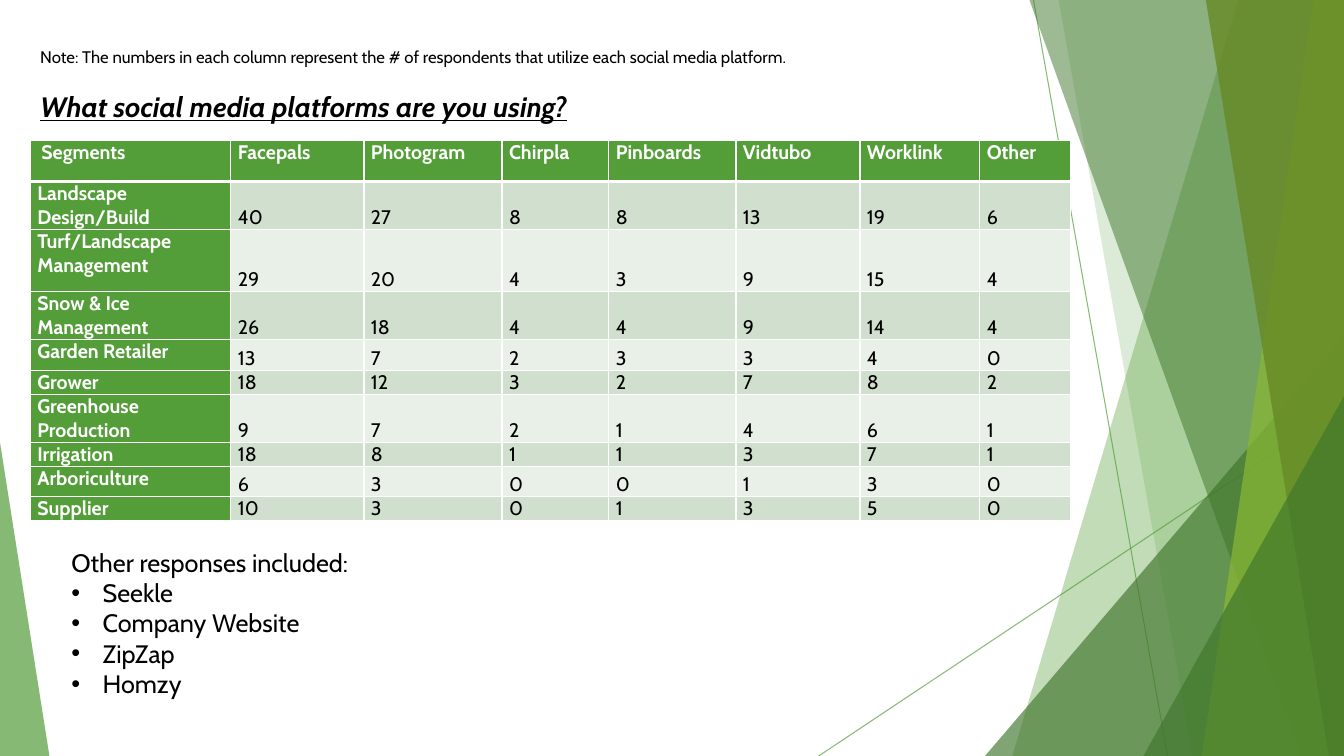
from lxml import etree
from pptx import Presentation
from pptx.dml.color import RGBColor
from pptx.enum.shapes import MSO_CONNECTOR, MSO_SHAPE
from pptx.enum.text import MSO_ANCHOR, MSO_AUTO_SIZE, PP_ALIGN
from pptx.oxml.ns import qn
from pptx.util import Inches, Pt

STRAIGHT = MSO_CONNECTOR.STRAIGHT
TRIANGLE = MSO_SHAPE.ISOSCELES_TRIANGLE
TOP, BOTTOM = MSO_ANCHOR.TOP, MSO_ANCHOR.BOTTOM
LEFT = PP_ALIGN.LEFT
NO_AUTOFIT = MSO_AUTO_SIZE.NONE

FONT = "Cabin"
BLACK, WHITE = "000000", "FFFFFF"
GREEN, DARK_GREEN, LIME, OLIVE = "549E39", "3F762B", "8AB833", "678A26"
BANDS = ("D1DFCE", "E9F0E8")

# Panels give the x of their slanted edge at top and bottom;
# wedges give their width and height from the bottom right corner.
FACETS = [
    ("panel", 4.16, 1.92, GREEN, 36),
    ("panel", 2.38, 3.71, GREEN, 20),
    ("wedge", 3.56, 4.17, DARK_GREEN, 66),
    ("panel", 2.09, 4.79, DARK_GREEN, 50),
    ("panel", 4.91, 3.8, LIME, 70),
    ("panel", 3.84, 5.06, OLIVE, 80),
    ("wedge", 1.99, 3.57, DARK_GREEN, 66),
]
FACET_LINES = [(2.13, 0, 3.46, 7.5), (5.21, 4.03, 0, 7.5)]

PLATFORMS = ["Facepals", "Photogram", "Chirpla", "Pinboards",
             "Vidtubo", "Worklink", "Other"]
COLUMN_WIDTHS = [1.99, 1.32, 1.37, 1.06, 1.26, 1.23, 1.19, 0.9]
HEADER_HEIGHT = 0.41
SEGMENTS = [
    ("Landscape Design/Build", 0.47, [40, 27, 8, 8, 13, 19, 6]),
    ("Turf/Landscape Management", 0.62, [29, 20, 4, 3, 9, 15, 4]),
    ("Snow & Ice Management", 0.47, [26, 18, 4, 4, 9, 14, 4]),
    ("Garden Retailer", 0.31, [13, 7, 2, 3, 3, 4, 0]),
    ("Grower", 0.23, [18, 12, 3, 2, 7, 8, 2]),
    ("Greenhouse Production", 0.47, [9, 7, 2, 1, 4, 6, 1]),
    ("Irrigation", 0.23, [18, 8, 1, 1, 3, 7, 1]),
    ("Arboriculture", 0.3, [6, 3, 0, 0, 1, 3, 0]),
    ("Supplier", 0.23, [10, 3, 0, 1, 3, 5, 0]),
]
OTHER_RESPONSES = ["Seekle", "Company Website", "ZipZap", "Homzy"]


def rgb(color):
    return RGBColor.from_string(color)


def set_alpha(element, percent):
    for color in element.iter(qn("a:srgbClr")):
        etree.SubElement(color, qn("a:alpha"), val=str(percent * 1000))


def style_font(paragraph, size, color=BLACK, bold=False):
    font = paragraph.font
    font.name, font.size, font.bold = FONT, Pt(size), bold
    font.color.rgb = rgb(color)


def fill_facet(facet, color, percent):
    facet.shadow.inherit = False
    facet.fill.solid()
    facet.fill.fore_color.rgb = rgb(color)
    facet.line.fill.background()
    set_alpha(facet.fill._xPr, percent)


def add_wedge(slide, left, top, width, height, apex, color, percent):
    wedge = slide.shapes.add_shape(
        TRIANGLE, Inches(left), Inches(top), Inches(width), Inches(height))
    wedge.adjustments[0] = apex
    fill_facet(wedge, color, percent)


def add_facet_band(slide, left, top, width, height):
    """Overlapping translucent facets along the right edge."""
    right, bottom = left + width, top + height
    for x1, y1, x2, y2 in FACET_LINES:
        line = slide.shapes.add_connector(
            STRAIGHT, Inches(left + x1), Inches(top + y1),
            Inches(left + x2), Inches(top + y2))
        line.line.color.rgb = rgb(GREEN)
        line.line.width = Pt(0.75)
        properties = line._element.spPr
        set_alpha(properties, 70)
        etree.SubElement(properties, qn("a:effectLst"))
    for kind, a, b, color, percent in FACETS:
        if kind == "wedge":
            add_wedge(slide, right - a, bottom - b, a, b, 1, color, percent)
            continue
        corners = [(left + a, top), (right, top), (right, bottom), (left + b, bottom)]
        points = [(Inches(x), Inches(y)) for x, y in corners]
        builder = slide.shapes.build_freeform(*points[0])
        builder.add_line_segments(points[1:], close=True)
        fill_facet(builder.convert_to_shape(), color, percent)


def add_borders(cell, bottom_width):
    properties = cell._tc.get_or_add_tcPr()
    widths = {"a:lnL": 1, "a:lnR": 1, "a:lnT": 1, "a:lnB": bottom_width}
    for position, (side, width) in enumerate(widths.items()):
        border = etree.Element(qn(side), w=str(Pt(width)))
        fill = etree.SubElement(border, qn("a:solidFill"))
        etree.SubElement(fill, qn("a:srgbClr"), val=WHITE)
        properties.insert(position, border)


def add_platform_table(slide, left, top, width, height):
    rows = [["Segments", *PLATFORMS]]
    rows += [[segment, *counts] for segment, _, counts in SEGMENTS]
    heights = [HEADER_HEIGHT] + [row_height for _, row_height, _ in SEGMENTS]
    table = slide.shapes.add_table(
        len(rows), len(COLUMN_WIDTHS), Inches(left), Inches(top),
        Inches(width), Inches(height)).table
    for column, column_width in zip(table.columns, COLUMN_WIDTHS):
        column.width = Inches(column_width)
    for r, values in enumerate(rows):
        table.rows[r].height = Inches(heights[r])
        for c, value in enumerate(values):
            cell = table.cell(r, c)
            heading = r == 0 or c == 0
            cell.text = str(value)
            cell.margin_left = Inches(0.11 if r == c == 0 else 0.07)
            cell.margin_right = Inches(0.07)
            cell.margin_top = cell.margin_bottom = 0
            cell.vertical_anchor = TOP if heading else BOTTOM
            cell.fill.solid()
            cell.fill.fore_color.rgb = rgb(GREEN if heading else BANDS[(r - 1) % 2])
            add_borders(cell, 3 if r == 0 else 1)
            style_font(cell.text_frame.paragraphs[0], 14,
                       WHITE if heading else BLACK, heading)


def add_other_responses(slide, left, top, width, height):
    box = slide.shapes.add_textbox(
        Inches(left), Inches(top), Inches(width), Inches(height))
    frame = box.text_frame
    frame.word_wrap = True
    frame.text = "\n".join(["Other responses included:", *OTHER_RESPONSES])
    for number, paragraph in enumerate(frame.paragraphs):
        if number:
            properties = paragraph._p.get_or_add_pPr()
            properties.set("marL", str(Inches(0.31)))
            properties.set("indent", str(Inches(-0.31)))
            etree.SubElement(properties, qn("a:buFont"), typeface="Arial")
            etree.SubElement(properties, qn("a:buChar"), char="•")
        style_font(paragraph, 18)


def add_question(slide, left, top, width, height):
    title = slide.shapes.title
    title.left, title.top = Inches(left), Inches(top)
    title.width, title.height = Inches(width), Inches(height)
    frame = title.text_frame
    frame.text = "What social media platforms are you using?"
    frame.word_wrap = False
    frame.auto_size = NO_AUTOFIT
    frame.vertical_anchor = TOP
    question = frame.paragraphs[0]
    question.alignment = LEFT
    style_font(question, 20, bold=True)
    question.font.italic = question.font.underline = True


def add_note(slide, left, top, width, height):
    box = slide.shapes.add_textbox(
        Inches(left), Inches(top), Inches(width), Inches(height))
    frame = box.text_frame
    frame.word_wrap = False
    frame.text = ("Note: The numbers in each column represent the # of respondents "
                  "that utilize each social media platform.")
    style_font(frame.paragraphs[0], 12)


def main():
    deck = Presentation()
    deck.slide_width, deck.slide_height = Inches(13.33), Inches(7.5)
    slide = deck.slides.add_slide(deck.slide_layouts[5])
    add_facet_band(slide, 8.12, 0, 5.21, 7.5)
    add_wedge(slide, 0, 4.39, 0.49, 3.11, 0, GREEN, 70)
    add_platform_table(slide, 0.3, 1.39, 10.32, 3.76)
    add_other_responses(slide, 0.61, 5.38, 5.3, 1.92)
    add_question(slide, 0.3, 0.84, 6.02, 0.44)
    add_note(slide, 0.3, 0.41, 8.25, 0.61)
    deck.save("out.pptx")


if __name__ == "__main__":
    main()
